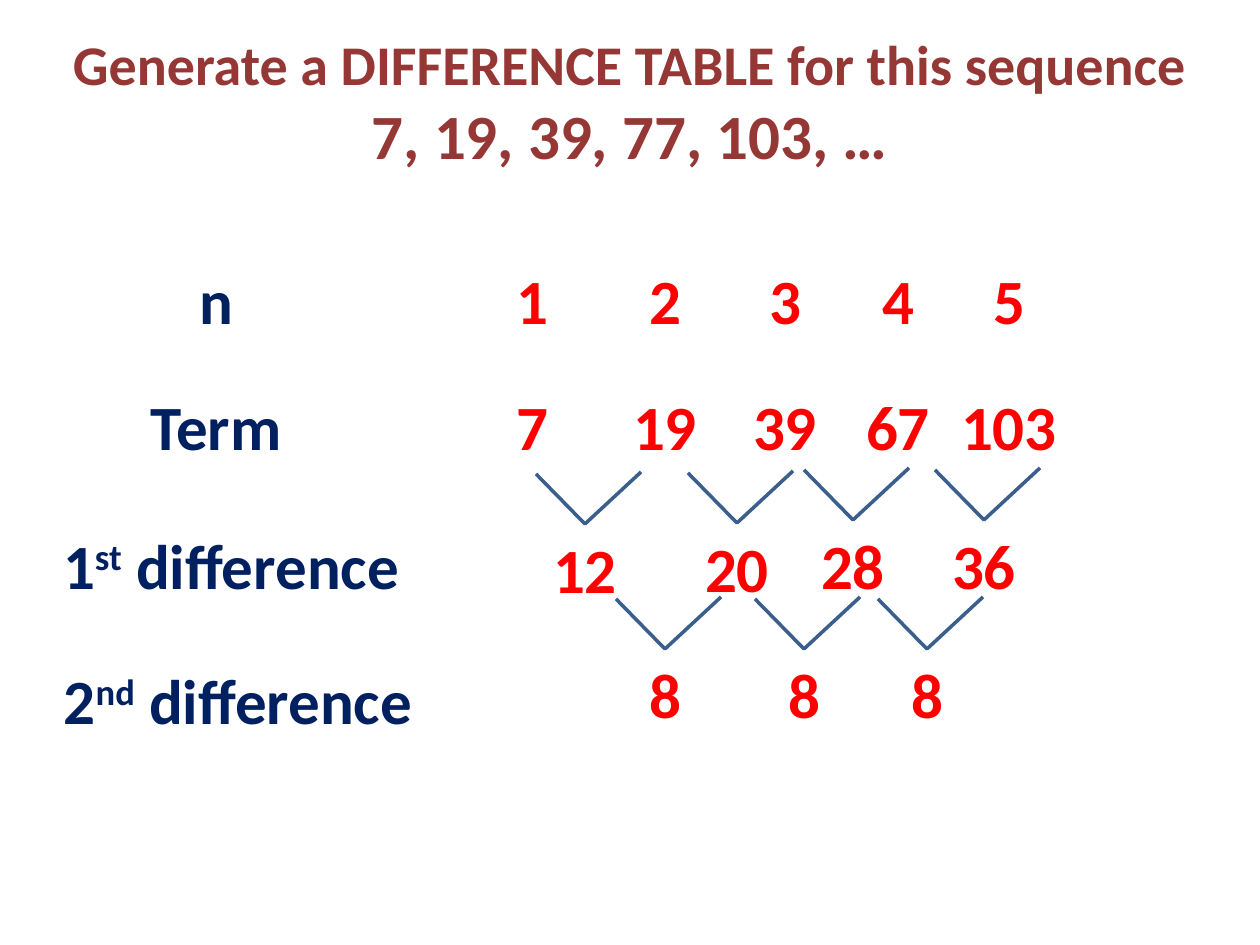
from pptx import Presentation
from pptx.dml.color import RGBColor
from pptx.enum.text import MSO_AUTO_SIZE, PP_ALIGN
from pptx.util import Pt

PX = 914400 / 126
CENTER = PP_ALIGN.CENTER
FIT = MSO_AUTO_SIZE.SHAPE_TO_FIT_TEXT
COLORS = {"title": "953735", "label": "002060", "number": "FF0000", "line": "3A5F8C"}

deck = Presentation()
deck.slide_width = round(1260 * PX)
deck.slide_height = round(945 * PX)
slide = deck.slides.add_slide(deck.slide_layouts[6])
shapes = slide.shapes


def add_text(mid, top, width, height, lines, color, wrap=False):
    box = shapes.add_textbox(*(round(v * PX) for v in (mid - width / 2, top, width, height)))
    frame = box.text_frame
    frame.word_wrap = wrap
    frame.auto_size = FIT
    for i, (parts, size) in enumerate(lines):
        para = frame.paragraphs[0] if i == 0 else frame.add_paragraph()
        para.alignment = CENTER
        para.font.name = "Calibri"
        para.font.size = Pt(size)
        para.font.bold = True
        para.font.color.rgb = RGBColor.from_string(COLORS[color])
        for j, part in enumerate(parts):
            run = para.add_run()
            run.text = part
            if j == 1:
                run.font._element.set("baseline", "30000")


def add_vee(x, y):
    pen = shapes.build_freeform(x - 49, y - 50, scale=PX)
    pen.add_line_segments([(x, y), (x + 56, y - 52)], close=False)
    vee = pen.convert_to_shape()
    vee.shadow.inherit = False
    vee.fill.background()
    vee.line.color.rgb = RGBColor.from_string(COLORS["line"])
    vee.line.width = Pt(2)


title = [
    (["Generate a DIFFERENCE TABLE for this sequence"], 32),
    (["7, 19, 39, 77, 103, …"], 36),
]
add_text(630, 23, 1191, 158, title, "title", wrap=True)

labels = [
    (216, 255, 59, ["n"]),
    (216, 381, 158, ["Term"]),
    (231, 520, 372, ["1", "st", " difference"]),
    (238, 655, 386, ["2", "nd", " difference"]),
]
for mid, top, width, parts in labels:
    add_text(mid, top, width, 89, [(parts, 36)], "label")

widths = {1: 59, 2: 89, 3: 122}
columns = [(532, "1", "7"), (665, "2", "19"), (785, "3", "39"), (898, "4", "67"), (1009, "5", "103")]
for mid, *pair in columns:
    for top, text in zip((255, 381), pair):
        add_text(mid, top, widths[len(text)], 89, [([text], 36)], "number")

gaps = [
    (585, 524, "12"), (737, 523, "20"), (853, 520, "28"), (984, 520, "36"),
    (665, 649, "8"), (804, 649, "8"), (927, 649, "8"),
]
for mid, top, text in gaps:
    add_vee(mid, top)
    add_text(mid, top, widths[len(text)], 89, [([text], 36)], "number")

deck.save("out.pptx")
